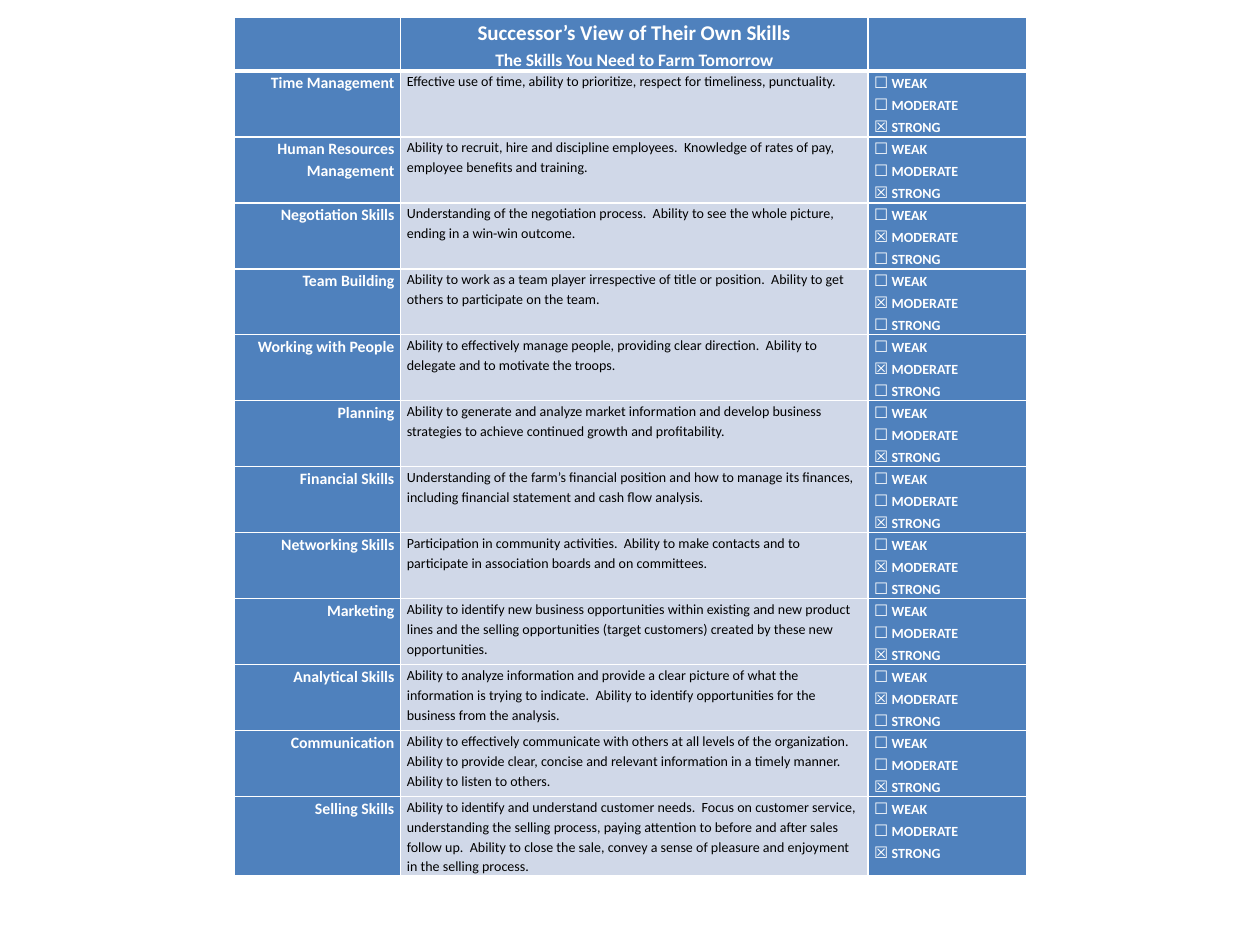
from dataclasses import dataclass
from enum import IntEnum

from lxml.etree import SubElement
from pptx import Presentation
from pptx.dml.color import RGBColor
from pptx.enum.text import PP_ALIGN as Align
from pptx.oxml.ns import qn
from pptx.table import Table, _Cell as Cell
from pptx.text.text import _Paragraph as Paragraph
from pptx.util import Pt


class Rating(IntEnum):
    WEAK = 0
    MODERATE = 1
    STRONG = 2


@dataclass(frozen=True)
class Theme:
    font: str = "Calibri"
    blue: str = "4F81BD"
    pale: str = "D0D8E8"
    white: str = "FFFFFF"
    black: str = "000000"
    title_size: float = 12
    subtitle_size: float = 10
    label_size: float = 9
    body_size: float = 8
    line_spacing: float = 1.15
    side_margin: float = 3.6
    border: float = 1
    header_border: float = 3


@dataclass(frozen=True)
class Skill:
    name: str
    description: str
    rating: Rating


THEME = Theme()
LEFT, TOP, TABLE_HEIGHT = 134.1, 9.7, 484.5
COLUMN_WIDTHS = (94.8, 267, 90.7)
HEADER_HEIGHT, ROW_HEIGHT, LAST_ROW_HEIGHT = 30, 35.4, 42.6
TITLE = "Successor’s View of Their Own Skills"
SUBTITLE = "The Skills You Need to Farm Tomorrow"

SKILLS = (
    Skill("Time Management",
          "Effective use of time, ability to prioritize, respect for timeliness, punctuality.",
          Rating.STRONG),
    Skill("Human Resources Management",
          "Ability to recruit, hire and discipline employees.  Knowledge of rates of pay, "
          "employee benefits and training.", Rating.STRONG),
    Skill("Negotiation Skills",
          "Understanding of the negotiation process.  Ability to see the whole picture, "
          "ending in a win-win outcome.", Rating.MODERATE),
    Skill("Team Building",
          "Ability to work as a team player irrespective of title or position.  Ability to get "
          "others to participate on the team.", Rating.MODERATE),
    Skill("Working with People",
          "Ability to effectively manage people, providing clear direction.  Ability to "
          "delegate and to motivate the troops.", Rating.MODERATE),
    Skill("Planning",
          "Ability to generate and analyze market information and develop business "
          "strategies to achieve continued growth and profitability.", Rating.STRONG),
    Skill("Financial Skills",
          "Understanding of the farm’s financial position and how to manage its finances, "
          "including financial statement and cash flow analysis.", Rating.STRONG),
    Skill("Networking Skills",
          "Participation in community activities.  Ability to make contacts and to "
          "participate in association boards and on committees.", Rating.MODERATE),
    Skill("Marketing",
          "Ability to identify new business opportunities within existing and new product "
          "lines and the selling opportunities (target customers) created by these new "
          "opportunities.", Rating.STRONG),
    Skill("Analytical Skills",
          "Ability to analyze information and provide a clear picture of what the "
          "information is trying to indicate.  Ability to identify opportunities for the "
          "business from the analysis.", Rating.MODERATE),
    Skill("Communication",
          "Ability to effectively communicate with others at all levels of the organization.  "
          "Ability to provide clear, concise and relevant information in a timely manner.  "
          "Ability to listen to others.", Rating.STRONG),
    Skill("Selling Skills",
          "Ability to identify and understand customer needs.  Focus on customer service, "
          "understanding the selling process, paying attention to before and after sales "
          "follow up.  Ability to close the sale, convey a sense of pleasure and enjoyment "
          "in the selling process.", Rating.STRONG),
)


def format_cell(cell: Cell, fill: str, top: float = THEME.border,
                bottom: float = THEME.border) -> None:
    cell.margin_left = cell.margin_right = Pt(THEME.side_margin)
    cell.margin_top = cell.margin_bottom = Pt(0)
    properties = cell._tc.get_or_add_tcPr()
    widths = {"L": THEME.border, "R": THEME.border, "T": top, "B": bottom}
    for side, width in widths.items():
        line = SubElement(properties, qn(f"a:ln{side}"), w=str(Pt(width)))
        solid = SubElement(line, qn("a:solidFill"))
        SubElement(solid, qn("a:srgbClr"), val=THEME.white)
    cell.fill.solid()
    cell.fill.fore_color.rgb = RGBColor.from_string(fill)


def format_paragraph(paragraph: Paragraph, color: str, bold: bool,
                     align: Align = Align.LEFT) -> None:
    paragraph.alignment = align
    paragraph.line_spacing = THEME.line_spacing
    paragraph.font.name = THEME.font
    paragraph.font.bold = bold
    paragraph.font.color.rgb = RGBColor.from_string(color)


def write_lines(cell: Cell, lines: tuple[tuple[str, float], ...], color: str, bold: bool,
                align: Align = Align.LEFT) -> None:
    cell.text = "\n".join(text for text, _ in lines)
    for paragraph, (_, size) in zip(cell.text_frame.paragraphs, lines):
        format_paragraph(paragraph, color, bold, align)
        paragraph.font.size = Pt(size)


def write_ratings(cell: Cell, chosen: Rating) -> None:
    for rating in Rating:
        frame = cell.text_frame
        paragraph = frame.add_paragraph() if rating else frame.paragraphs[0]
        format_paragraph(paragraph, THEME.white, True)
        box = "☒ " if rating == chosen else "☐ "
        for text, size in ((box, THEME.label_size), (rating.name, THEME.body_size)):
            run = paragraph.add_run()
            run.text = text
            run.font.size = Pt(size)


def fill_header(table: Table) -> None:
    for cell in table.rows[0].cells:
        format_cell(cell, THEME.blue, bottom=THEME.header_border)
    write_lines(table.cell(0, 1),
                ((TITLE, THEME.title_size), (SUBTITLE, THEME.subtitle_size)),
                THEME.white, True, Align.CENTER)


def fill_skill(table: Table, row: int, skill: Skill) -> None:
    name, description, ratings = table.rows[row].cells
    top = THEME.header_border if row == 1 else THEME.border
    for cell, fill in ((name, THEME.blue), (description, THEME.pale), (ratings, THEME.blue)):
        format_cell(cell, fill, top=top)
    write_lines(name, ((skill.name, THEME.label_size),), THEME.white, True, Align.RIGHT)
    write_lines(description, ((skill.description, THEME.body_size),), THEME.black, False)
    write_ratings(ratings, skill.rating)


def main() -> None:
    presentation = Presentation()
    presentation.slide_width, presentation.slide_height = Pt(720), Pt(540)
    slide = presentation.slides.add_slide(presentation.slide_layouts[6])
    shape = slide.shapes.add_table(len(SKILLS) + 1, len(COLUMN_WIDTHS), Pt(LEFT), Pt(TOP),
                                   Pt(sum(COLUMN_WIDTHS)), Pt(TABLE_HEIGHT))
    table = shape.table
    table.horz_banding = False
    for column, width in zip(table.columns, COLUMN_WIDTHS):
        column.width = Pt(width)
    heights = (HEADER_HEIGHT, *[ROW_HEIGHT] * (len(SKILLS) - 1), LAST_ROW_HEIGHT)
    for row, height in zip(table.rows, heights):
        row.height = Pt(height)
    shape.height = Pt(TABLE_HEIGHT)
    fill_header(table)
    for row, skill in enumerate(SKILLS, start=1):
        fill_skill(table, row, skill)
    presentation.save("out.pptx")


if __name__ == "__main__":
    main()
